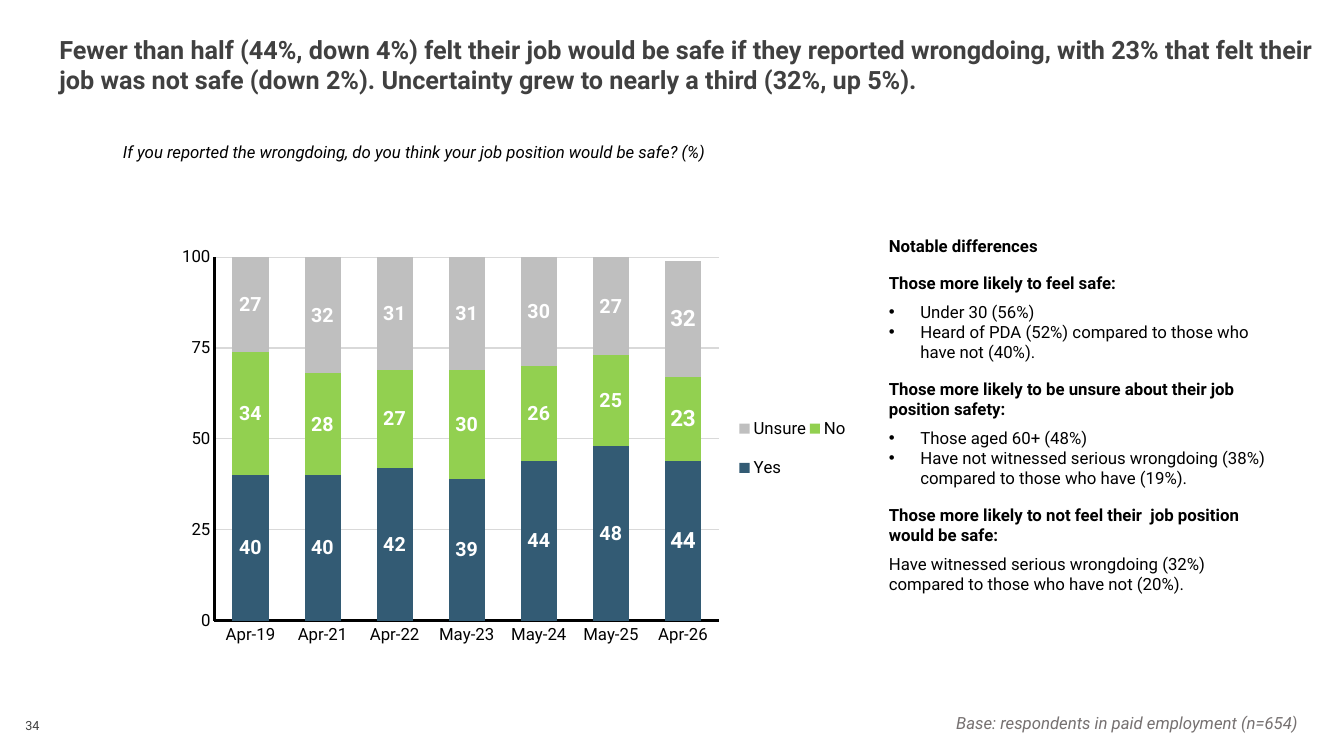
"""Build the job safety slide: stacked survey chart with notable differences."""
from dataclasses import dataclass

from lxml import etree
from pptx import Presentation
from pptx.chart.data import CategoryChartData
from pptx.dml.color import RGBColor
from pptx.enum.chart import XL_CHART_TYPE, XL_LEGEND_POSITION, XL_TICK_MARK
from pptx.enum.shapes import MSO_SHAPE
from pptx.enum.text import MSO_ANCHOR, PP_ALIGN
from pptx.oxml import parse_xml
from pptx.oxml.ns import nsdecls, qn
from pptx.util import Pt

STACKED = XL_CHART_TYPE.COLUMN_STACKED
LEGEND_RIGHT = XL_LEGEND_POSITION.RIGHT
NO_TICK = XL_TICK_MARK.NONE
RECTANGLE = MSO_SHAPE.RECTANGLE
TOP, MIDDLE = MSO_ANCHOR.TOP, MSO_ANCHOR.MIDDLE
LEFT, RIGHT = PP_ALIGN.LEFT, PP_ALIGN.RIGHT
FONT = "Roboto"
BLACK, WHITE, DARK_GREY = "000000", "FFFFFF", "404040"
DEFAULT_INSETS = (7.2, 3.6, 7.2, 3.6)
BULLET_INDENT = Pt(22.5)


@dataclass(frozen=True)
class Answer:
    name: str
    percentages: tuple[int, ...]
    color: str


@dataclass(frozen=True)
class Note:
    text: str
    bold: bool = False
    bullet: bool = False
    before: float = 0
    after: float = 0


WAVES = ("Apr-19", "Apr-21", "Apr-22", "May-23", "May-24", "May-25", "Apr-26")
ANSWERS = (
    Answer("Yes", (40, 40, 42, 39, 44, 48, 44), "335B74"),
    Answer("No", (34, 28, 27, 30, 26, 25, 23), "92D050"),
    Answer("Unsure", (27, 32, 31, 31, 30, 27, 32), "BFBFBF"),
)
NOTES = (
    Note("Notable differences", bold=True, after=6),
    Note("Those more likely to feel safe:", bold=True, before=6),
    Note("Under 30 (56%)", bullet=True, before=6),
    Note("Heard of PDA (52%) compared to those who have not (40%).", bullet=True, after=6),
    Note("Those more likely to be unsure about their job position safety:", bold=True, before=6),
    Note("Those aged 60+ (48%)", bullet=True, before=6),
    Note("Have not witnessed serious wrongdoing (38%) compared to those who have (19%).",
         bullet=True, after=6),
    Note("Those more likely to not feel their  job position would be safe:",
         bold=True, before=6, after=6),
    Note("Have witnessed serious wrongdoing (32%) compared to those who have not (20%)."),
)


def rgb(color: str) -> RGBColor:
    return RGBColor.from_string(color)


def style_font(font, size: float, color: str = BLACK, bold: bool = False,
               italic: bool = False) -> None:
    font.name, font.size, font.bold, font.italic = FONT, Pt(size), bold, italic
    font.color.rgb = rgb(color)


def set_frame(frame, insets=DEFAULT_INSETS, anchor=TOP) -> None:
    frame.word_wrap = True
    frame.vertical_anchor = anchor
    frame.margin_left, frame.margin_top, frame.margin_right, frame.margin_bottom = map(Pt, insets)


def add_text(slide, text: str, left: float, top: float, width: float, height: float, *,
             size: float, color: str = BLACK, bold: bool = False, italic: bool = False,
             align=LEFT, anchor=TOP, insets=DEFAULT_INSETS, spacing: float = 1) -> None:
    frame = slide.shapes.add_textbox(Pt(left), Pt(top), Pt(width), Pt(height)).text_frame
    set_frame(frame, insets, anchor)
    paragraph = frame.paragraphs[0]
    paragraph.alignment, paragraph.line_spacing = align, spacing
    run = paragraph.add_run()
    run.text = text
    style_font(run.font, size, color, bold, italic)


def add_notes_panel(slide, notes: tuple[Note, ...]) -> None:
    panel = slide.shapes.add_shape(RECTANGLE, Pt(627.84), Pt(153.36), Pt(290.16), Pt(285.12))
    panel.shadow.inherit = False
    panel.fill.background()
    panel.line.color.rgb, panel.line.width = rgb(WHITE), Pt(1)
    frame = panel.text_frame
    set_frame(frame, (7.2, 15.3, 7.2, 3.6))
    for index, note in enumerate(notes):
        paragraph = frame.add_paragraph() if index else frame.paragraphs[0]
        paragraph.alignment = LEFT
        paragraph.space_before, paragraph.space_after = Pt(note.before), Pt(note.after)
        if note.bullet:
            properties = paragraph._p.get_or_add_pPr()
            properties.set("marL", str(BULLET_INDENT))
            properties.set("indent", str(-BULLET_INDENT))
            etree.SubElement(properties, qn("a:buFont"), typeface="Arial")
            etree.SubElement(properties, qn("a:buChar"), char="•")
        run = paragraph.add_run()
        run.text = note.text
        style_font(run.font, 12, bold=note.bold)


def manual_layout(x: float, y: float, width: float, height: float, inner: bool = False):
    target = '<c:layoutTarget val="inner"/>' if inner else ""
    return parse_xml(
        f'<c:layout {nsdecls("c")}><c:manualLayout>{target}'
        '<c:xMode val="edge"/><c:yMode val="edge"/>'
        f'<c:x val="{x}"/><c:y val="{y}"/><c:w val="{width}"/><c:h val="{height}"/>'
        '</c:manualLayout></c:layout>')


def style_axis(axis) -> None:
    axis.major_tick_mark = axis.minor_tick_mark = NO_TICK
    axis.format.line.color.rgb, axis.format.line.width = rgb(BLACK), Pt(2)
    style_font(axis.tick_labels.font, 12)


def add_survey_chart(slide, waves: tuple[str, ...], answers: tuple[Answer, ...]) -> None:
    data = CategoryChartData(number_format="0")
    data.categories = waves
    for answer in answers:
        data.add_series(answer.name, answer.percentages)
    chart = slide.shapes.add_chart(
        STACKED, Pt(-12.24), Pt(162.72), Pt(672.48), Pt(349.92), data).chart
    chart.has_title = False
    style_font(chart.font, 12)

    style_axis(chart.category_axis)
    scale = chart.value_axis
    style_axis(scale)
    scale.minimum_scale, scale.maximum_scale, scale.major_unit = 0, 100, 25
    scale.has_major_gridlines = True
    grid = scale.major_gridlines.format.line
    grid.color.rgb, grid.width = rgb("D9D9D9"), Pt(0.75)

    columns = chart.plots[0]
    columns.gap_width, columns.overlap, columns.vary_by_categories = 100, 100, False
    for answer, series in zip(answers, columns.series):
        series.format.fill.solid()
        series.format.fill.fore_color.rgb = rgb(answer.color)
        labels = series.data_labels
        labels.show_value = True
        labels.number_format, labels.number_format_is_linked = "0", False
        style_font(labels.font, 14, WHITE, bold=True)
        latest = series.points[len(waves) - 1].data_label
        style_font(latest.font, 16, WHITE, bold=True)

    chart.has_legend = True
    legend = chart.legend
    legend.position, legend.include_in_layout = LEGEND_RIGHT, False
    style_font(legend.font, 12)
    legend_position = legend._element.find(qn("c:legendPos"))
    legend_position.addnext(manual_layout(0.8, 0.35, 0.12, 0.2))
    plot_area = chart._chartSpace.chart.plotArea
    for layout in plot_area.findall(qn("c:layout")):
        plot_area.remove(layout)
    plot_area.insert(0, manual_layout(0.246, 0.06, 0.536, 0.742, inner=True))


def main() -> None:
    deck = Presentation()
    deck.slide_width, deck.slide_height = Pt(960), Pt(540)
    slide = deck.slides.add_slide(deck.slide_layouts[6])
    add_survey_chart(slide, WAVES, ANSWERS)
    add_text(slide, "If you reported the wrongdoing, do you think your job position would be safe? (%)",
             87.84, 101.52, 784.08, 45.36, size=12, italic=True, insets=(0, 0, 7.2, 3.6))
    add_text(slide, "Base: respondents in paid employment (n=654)",
             32.4, 510.48, 894.96, 15.84, size=12, color="767171", italic=True,
             align=RIGHT, insets=(0, 0, 0, 0), spacing=0.9)
    add_text(slide, "34", -47.52, 504, 82.8, 28.8, size=9, color=DARK_GREY,
             align=RIGHT, anchor=MIDDLE)
    add_text(slide, "Fewer than half (44%, down 4%) felt their job would be safe if they reported "
             "wrongdoing, with 23% that felt their job was not safe (down 2%). "
             "Uncertainty grew to nearly a third (32%, up 5%).",
             35.28, 20.88, 924.48, 58.32, size=18, color=DARK_GREY, bold=True)
    add_notes_panel(slide, NOTES)
    deck.save("out.pptx")


if __name__ == "__main__":
    main()
